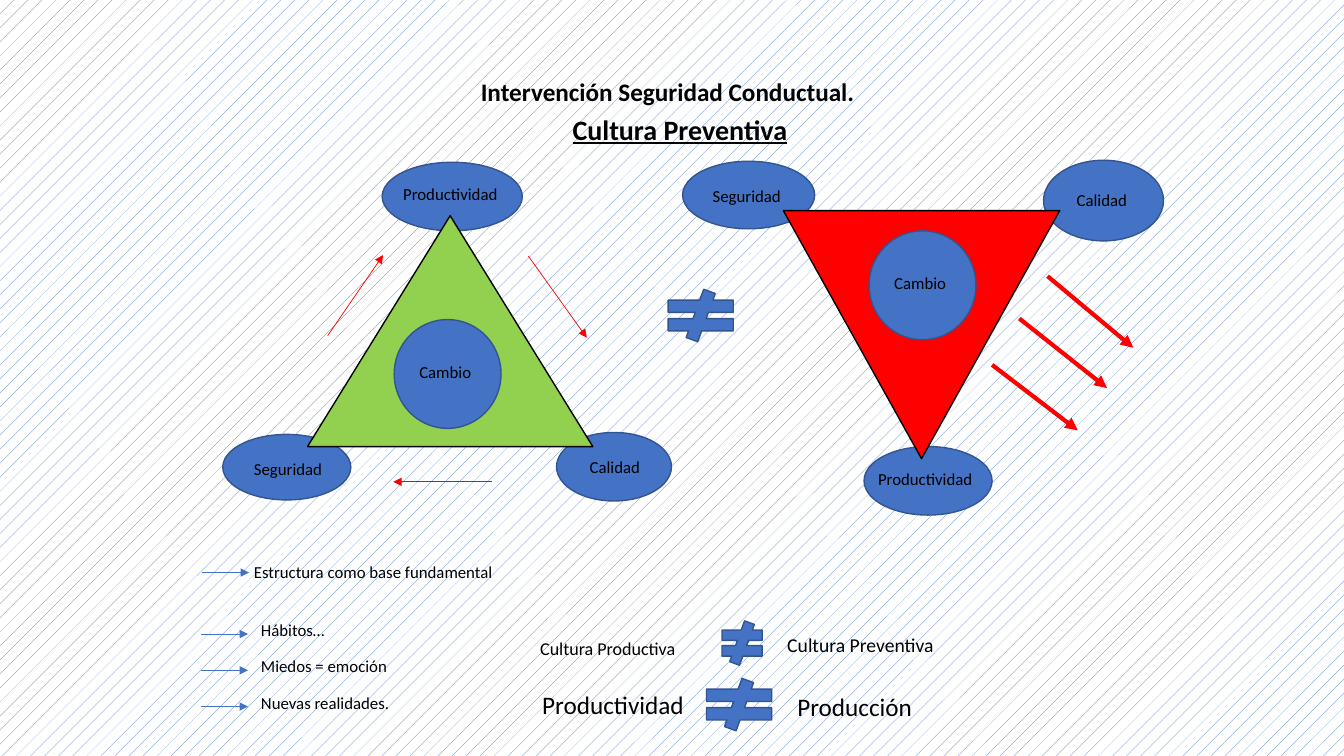
from lxml import etree
from pptx import Presentation
from pptx.dml.color import RGBColor
from pptx.enum.dml import MSO_PATTERN
from pptx.enum.shapes import MSO_CONNECTOR, MSO_SHAPE
from pptx.enum.text import MSO_ANCHOR
from pptx.oxml.ns import qn
from pptx.util import Inches, Pt

ELLIPSE = MSO_SHAPE.OVAL
TRIANGLE = MSO_SHAPE.ISOSCELES_TRIANGLE
NOT_EQUAL = MSO_SHAPE.MATH_NOT_EQUAL
STRAIGHT = MSO_CONNECTOR.STRAIGHT
MIDDLE = MSO_ANCHOR.MIDDLE
DOTS = MSO_PATTERN.PERCENT_5

FONT = "Calibri"
COLOURS = {
    "blue": "4472C4",
    "outline": "325491",
    "green": "92D050",
    "red": "FF0000",
    "black": "000000",
    "white": "FFFFFF",
}


def colour(name):
    return RGBColor.from_string(COLOURS[name])


def add_figure(page, kind, box, fill="blue", line="outline", rotation=0):
    figure = page.shapes.add_shape(kind, *map(Inches, box))
    figure.shadow.inherit = False
    figure.fill.solid()
    figure.fill.fore_color.rgb = colour(fill)
    figure.line.color.rgb = colour(line)
    figure.line.width = Pt(1)
    figure.rotation = rotation


def add_label(page, text, box, size=12, bold=False, underline=False,
              wrap=True, anchor=None, spacing=None):
    label = page.shapes.add_textbox(*map(Inches, box))
    frame = label.text_frame
    frame.word_wrap = wrap
    if anchor is not None:
        frame.vertical_anchor = anchor
    frame.text = text
    para = frame.paragraphs[0]
    if spacing:
        para.line_spacing = spacing
    font = para.runs[0].font
    font.name = FONT
    font.size = Pt(size)
    font.bold = bold
    font.underline = underline
    font.color.rgb = colour("black")


def add_arrow(page, start, end, line, width):
    arrow = page.shapes.add_connector(STRAIGHT, *map(Inches, (*start, *end)))
    arrow.line.color.rgb = colour(line)
    arrow.line.width = Pt(width)
    etree.SubElement(arrow.line._get_or_add_ln(), qn("a:tailEnd"), type="triangle")
    etree.SubElement(arrow._element.spPr, qn("a:effectLst"))


def add_heading(page, left, top):
    add_label(page, "Intervención Seguridad Conductual.", (left, top, 4.45, 0.4),
              size=18, bold=True, wrap=False)
    add_label(page, "Cultura Preventiva", (left + 0.91, top + 0.39, 2.65, 0.4),
              size=20, bold=True, underline=True, anchor=MIDDLE, spacing=0.9)


def add_triangle_diagram(page, box, fill, rotation, corners, core, arrows, arrow_width):
    """Draw a triangle in box; corners, core and arrows are offsets from its top left."""
    left, top, _, _ = box

    def place(offset):
        return (left + offset[0], top + offset[1], *offset[2:])

    for _, ellipse, _ in corners:
        add_figure(page, ELLIPSE, place(ellipse))
    add_figure(page, TRIANGLE, box, fill, "black", rotation)
    for text, _, label in corners:
        add_label(page, text, place((*label, 0.3)))
    core_left, core_top = core
    add_figure(page, ELLIPSE, place((core_left, core_top, 1.06, 1.08)))
    add_label(page, "Cambio", place((core_left + 0.15, core_top + 0.37, 0.88, 0.3)))
    for start, end in arrows:
        add_arrow(page, place(start), place(end), "red", arrow_width)


def add_arrow_list(page, left, top):
    add_arrow(page, (left + 0.01, top + 0.16), (left + 0.48, top + 0.16), "blue", 0.5)
    add_label(page, "Estructura como base fundamental", (left + 0.43, top, 3.24, 0.3))
    for row, text in enumerate(("Hábitos…", "Miedos = emoción", "Nuevas realidades.")):
        row_top = top + 0.58 + row * 0.36
        add_arrow(page, (left, row_top + 0.19), (left + 0.47, row_top + 0.19), "blue", 0.5)
        add_label(page, text, (left + 0.5, row_top, 2.06, 0.3))


def add_comparisons(page, left, top):
    add_label(page, "Cultura Productiva", (left, top + 0.09, 1.67, 0.39),
              size=12.9, anchor=MIDDLE, spacing=0.9)
    add_figure(page, NOT_EQUAL, (left + 1.83, top, 0.54, 0.44))
    add_label(page, "Cultura Preventiva", (left + 2.45, top + 0.02, 1.8, 0.46),
              size=14, anchor=MIDDLE, spacing=0.9)
    add_label(page, "Productividad", (left + 0.02, top + 0.63, 1.73, 0.4), size=18)
    add_figure(page, NOT_EQUAL, (left + 1.63, top + 0.57, 0.88, 0.52))
    add_label(page, "Producción", (left + 2.55, top + 0.65, 1.73, 0.4), size=18)


def main():
    deck = Presentation()
    deck.slide_width = Inches(13.33)
    deck.slide_height = Inches(7.5)
    page = deck.slides.add_slide(deck.slide_layouts[6])
    backdrop = page.background.fill
    backdrop.patterned()
    backdrop.pattern = DOTS
    backdrop.fore_color.rgb = colour("blue")
    backdrop.back_color.rgb = colour("white")

    add_heading(page, 4.67, 0.71)
    add_triangle_diagram(
        page, (3.05, 2.14, 2.83, 2.29), "green", 0,
        corners=[
            ("Seguridad", (-0.84, 2.17, 1.27, 0.65), (-0.63, 2.36, 1.01)),
            ("Calidad", (2.47, 2.15, 1.14, 0.68), (2.7, 2.34, 0.71)),
            ("Productividad", (0.74, -0.53, 1.39, 0.68), (0.85, -0.37, 1.23)),
        ],
        core=(0.86, 1.03),
        arrows=[
            ((2.19, 0.4), (2.77, 1.21)),
            ((0.2, 1.19), (0.75, 0.39)),
            ((1.83, 2.64), (0.85, 2.64)),
        ],
        arrow_width=0.5,
    )
    add_figure(page, NOT_EQUAL, (6.51, 2.87, 0.88, 0.52))
    add_triangle_diagram(
        page, (7.77, 2.09, 2.74, 2.46), "red", 180,
        corners=[
            ("Calidad", (2.58, -0.5, 1.19, 0.8), (2.81, -0.26, 0.74)),
            ("Seguridad", (-1, -0.49, 1.31, 0.67), (-0.8, -0.3, 0.98)),
            ("Productividad", (0.8, 2.34, 1.27, 0.68), (0.84, 2.51, 1.15)),
        ],
        core=(0.85, 0.2),
        arrows=[
            ((2.62, 0.65), (3.47, 1.36)),
            ((2.34, 1.07), (3.21, 1.76)),
            ((2.07, 1.53), (2.92, 2.18)),
        ],
        arrow_width=3,
    )
    add_arrow_list(page, 1.99, 5.52)
    add_comparisons(page, 5.26, 6.16)
    deck.save("out.pptx")


if __name__ == "__main__":
    main()
